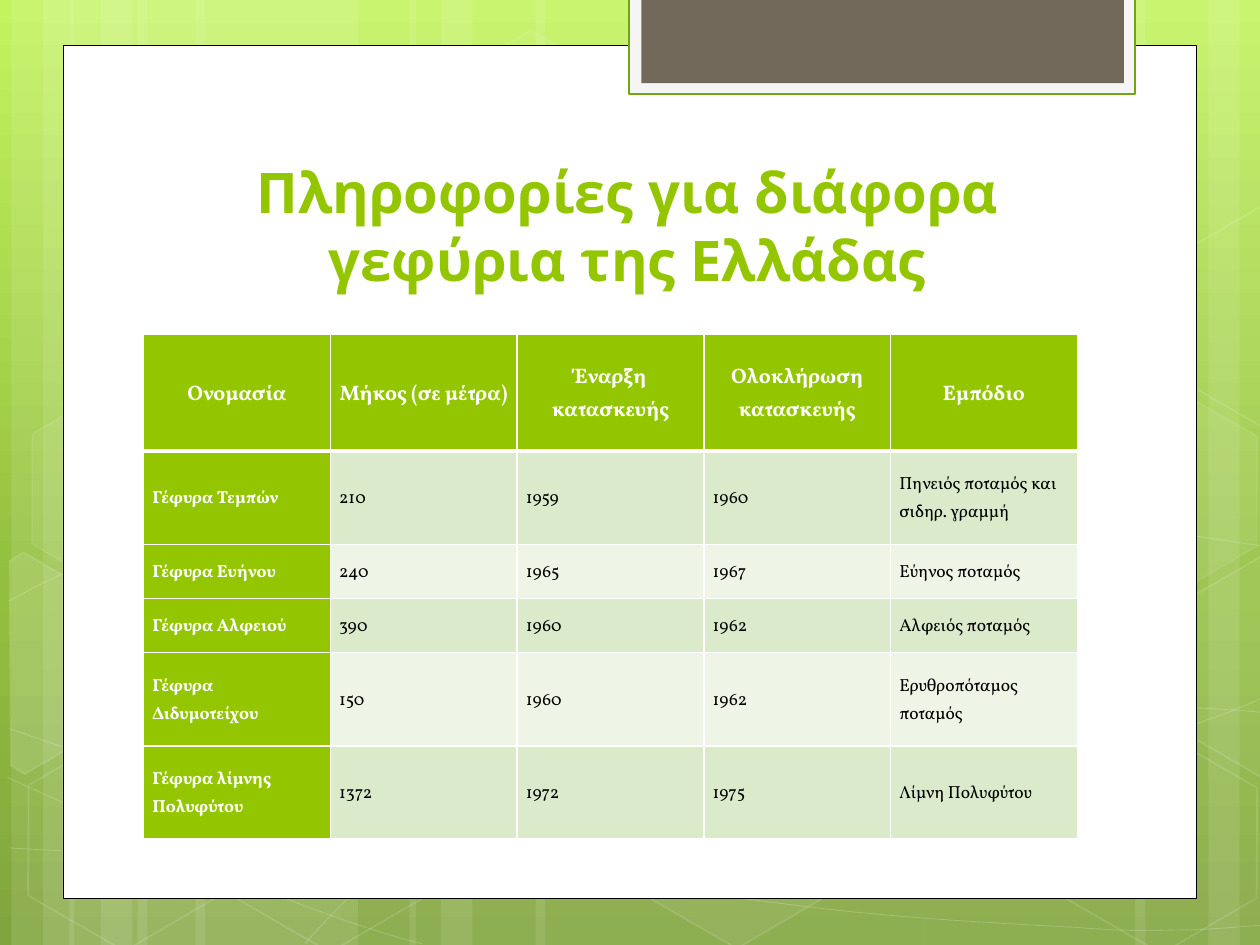
import copy
import dataclasses
import math

import pptx
import pptx.dml.color
import pptx.enum.shapes
import pptx.enum.text
import pptx.oxml
import pptx.oxml.ns
import pptx.util

SHAPE = pptx.enum.shapes.MSO_SHAPE
ALIGN = pptx.enum.text.PP_ALIGN
ANCHOR = pptx.enum.text.MSO_ANCHOR

# The slide is a grid of 10 columns by 7.5 rows; one grid unit is one inch.
UNIT = pptx.util.Inches(1)
TILT = 30
COLORS = {
    "sky": "C3F35F", "leaf": "93BF3F", "moss": "81A53E",
    "green": "94C600", "rim": "74A510", "tab": "71685A", "tab_rim": "F5F5F5",
    "dark_band": "DCEACC", "light_band": "EEF5E7",
    "white": "FFFFFF", "black": "000000",
}
TITLE_FONT, TABLE_FONT = "League Spartan", "Vollkorn"

# Each stripe group: edge, width of its widest stripe, direction.
STRIPE_GROUPS = [(0.09, 1.75, 1), (0.55, 1.75, 1), (10.09, 1.75, -1), (3.25, 3.09, 1)]

# Cubic curves: a start point, then three points for each segment.
CURVES = [
    [(0.07, 6.73), (0.61, 6.76), (1.15, 6.79), (1.9, 6.78), (2.65, 6.77), (3.58, 6.75),
     (4.58, 6.65), (5.58, 6.55), (7, 6.36), (7.92, 6.17), (8.83, 5.98), (9.77, 5.68),
     (10.07, 5.51)],
    [(0.07, 4.77), (0.36, 4.61), (0.65, 4.46), (1.21, 4.31), (1.78, 4.16), (2.59, 3.94),
     (3.47, 3.87), (4.36, 3.8), (5.44, 3.79), (6.54, 3.87), (7.64, 3.95), (9.47, 4.26),
     (10.07, 4.34)],
    [(0.06, 6.17), (1.27, 6.72), (2.47, 7.27), (3.35, 7.49)],
    [(0.07, 5.78), (0.38, 5.89), (0.7, 6), (1.28, 6.16), (1.86, 6.31), (2.73, 6.56),
     (3.57, 6.73), (4.4, 6.9), (5.45, 7.08), (6.28, 7.18), (7.11, 7.29), (8, 7.33),
     (8.53, 7.36), (9.06, 7.4), (9.19, 7.38), (9.45, 7.38), (9.71, 7.37), (9.89, 7.35),
     (10.07, 7.34)],
    [(2.42, 7.49), (2.6, 7.29), (2.78, 7.09), (3.02, 6.91), (3.26, 6.72), (3.6, 6.53),
     (3.88, 6.39), (4.16, 6.25), (4.33, 6.19), (4.69, 6.09), (5.06, 5.99), (5.73, 5.85),
     (6.08, 5.78), (6.44, 5.71), (6.49, 5.71), (6.8, 5.69), (7.11, 5.66), (7.6, 5.63),
     (7.94, 5.62), (8.29, 5.61), (8.86, 5.62), (8.86, 5.62), (8.86, 5.62), (9.53, 5.62),
     (9.53, 5.62), (9.71, 5.63), (9.88, 5.64), (9.97, 5.65), (10.06, 5.66), (10.03, 5.65),
     (10.06, 5.66)],
]

# Hexagons: left, top, fill opacity, line opacity (percent).
HEXAGONS = [
    (3.34, 0.36, 4, 8), (4.97, 5.89, 6, 12), (0.11, 5.91, 0, 12), (0.14, 3.12, 7, 8),
    (1.74, 5.92, 0, 12), (8.34, 5.93, 0, 12), (8.34, 3.14, 7, 8),
]

# Hexagons cut by the slide's edge: centre, corners as they stand, fill opacity.
CUT_HEXAGONS = [
    ((0.36, 5.36), [(0.08, 4.45), (0.19, 4.38), (0.96, 4.83), (0.95, 5.7), (0.2, 6.14),
                    (0.09, 6.07)], 10),
    ((9.85, 5.2), [(9.26, 4.85), (10.02, 4.41), (10.09, 4.46), (10.09, 6.13), (10.02, 6.17),
                   (9.26, 5.73)], 4),
    ((9.85, 2.41), [(9.26, 2.07), (10.02, 1.63), (10.1, 1.68), (10.09, 3.35), (10.02, 3.39),
                    (9.26, 2.95)], 0),
]

BRIDGES = [
    ["Ονομασία", "Μήκος (σε μέτρα)", "Έναρξη κατασκευής", "Ολοκλήρωση κατασκευής", "Εμπόδιο"],
    ["Γέφυρα Τεμπών", "210", "1959", "1960", "Πηνειός ποταμός και σιδηρ. γραμμή"],
    ["Γέφυρα Ευήνου", "240", "1965", "1967", "Εύηνος ποταμός"],
    ["Γέφυρα Αλφειού", "390", "1960", "1962", "Αλφειός ποταμός"],
    ["Γέφυρα Διδυμοτείχου", "150", "1960", "1962", "Ερυθροπόταμος ποταμός"],
    ["Γέφυρα λίμνης Πολυφύτου", "1372", "1972", "1975", "Λίμνη Πολυφύτου"],
]
ROW_HEIGHTS = [0.93, 0.74, 0.43, 0.43, 0.74, 0.74]


@dataclasses.dataclass
class Box:
    left: float
    top: float
    width: float
    height: float

    def inner(self, left, top, width, height):
        return Box(self.left + left, self.top + top, width, height)

    def lengths(self):
        return [round(n * UNIT) for n in (self.left, self.top, self.width, self.height)]


def rgb(name):
    return pptx.dml.color.RGBColor.from_string(COLORS[name])


def paint(fill, color, opacity=100):
    """Fill with a colour; opacity is in percent, and 0 means no fill."""
    if not opacity:
        fill.background()
        return
    fill.solid()
    fill.fore_color.rgb = rgb(color)
    if opacity < 100:
        source = fill._xPr.find(pptx.oxml.ns.qn("a:solidFill"))[0]
        source.append(pptx.oxml.parse_xml(
            f'<a:alpha {pptx.oxml.ns.nsdecls("a")} val="{opacity * 1000}"/>'))


def style(shape, fill, opacity=100, line=None, width=0, line_opacity=100):
    shape.shadow.inherit = False
    paint(shape.fill, fill, opacity)
    if line:
        shape.line.width = pptx.util.Pt(width)
        paint(shape.line.fill, line, line_opacity)
    else:
        shape.line.fill.background()


def add_rectangle(slide, box, fill, **options):
    style(slide.shapes.add_shape(SHAPE.RECTANGLE, *box.lengths()), fill, **options)


def add_outline(slide, box, points, closed):
    scaled = [((box.left + x) * UNIT, (box.top + y) * UNIT) for x, y in points]
    builder = slide.shapes.build_freeform(*scaled[0])
    builder.add_line_segments(scaled[1:], close=closed)
    return builder.convert_to_shape()


def bend(outline):
    """Turn every three straight segments into one cubic curve."""
    qn = pptx.oxml.ns.qn
    route = outline.element.find(".//" + qn("a:path"))
    segments = route.findall(qn("a:lnTo"))
    for first in range(0, len(segments), 3):
        curve = route.makeelement(qn("a:cubicBezTo"))
        segments[first].addprevious(curve)
        for segment in segments[first:first + 3]:
            curve.append(segment[0])
            route.remove(segment)


def turn_back(point, center):
    """Undo the tilt of a point around a centre."""
    across, down = point[0] - center[0], point[1] - center[1]
    cosine, sine = math.cos(math.radians(TILT)), math.sin(math.radians(TILT))
    return center[0] + across * cosine + down * sine, center[1] + down * cosine - across * sine


def set_background(slide):
    fill = slide.background.fill
    fill.gradient()
    fill.gradient_angle = 270
    stop_list = slide.element.find(".//" + pptx.oxml.ns.qn("a:gsLst"))
    stop_list.append(copy.deepcopy(stop_list[0]))
    stops = [(0, "sky"), (0.62, "leaf"), (1, "moss")]
    for stop, (position, color) in zip(fill.gradient_stops, stops):
        stop.position = position
        stop.color.rgb = rgb(color)


def add_backdrop(slide, box):
    for edge, widest, direction in STRIPE_GROUPS:
        for offset, width in [(1, widest), (0, 0.5), (0.25, 0.83)]:
            left = edge + offset if direction > 0 else edge - offset - width
            add_rectangle(slide, box.inner(left, 0, width, box.height), "white", opacity=10)
    for controls in CURVES:
        curve = add_outline(slide, box, controls, closed=False)
        bend(curve)
        style(curve, "white", 0, "white", 0.5, 20)
    for left, top, opacity, line_opacity in HEXAGONS:
        place = box.inner(left, top, 1.75, 1.52)
        hexagon = slide.shapes.add_shape(SHAPE.HEXAGON, *place.lengths())
        hexagon.adjustments[0] = 0.285
        hexagon.rotation = TILT
        style(hexagon, "white", opacity, "white", 1, line_opacity)
    for center, corners, opacity in CUT_HEXAGONS:
        upright = [turn_back(corner, center) for corner in corners]
        hexagon = add_outline(slide, box, upright, closed=True)
        hexagon.rotation = TILT
        style(hexagon, "white", opacity, "white", 1, 12)


def add_card(slide, box):
    add_rectangle(slide, box, "white", line="black", width=0.5)
    add_rectangle(slide, box.inner(4.49, -0.38, 4.02, 0.77), "tab_rim", line="rim", width=1.25)
    add_rectangle(slide, box.inner(4.59, -0.38, 3.83, 0.68), "tab")


def write(paragraph, text, font, size, color, bold):
    run = paragraph.add_run()
    run.text = text
    run.font.name = font
    run.font.size = pptx.util.Pt(size)
    run.font.bold = bold
    run.font.color.rgb = rgb(color)


def place_title(slide, box):
    title = slide.shapes.title
    slide.shapes.element.append(title.element)  # in front of the card
    title.left, title.top, title.width, title.height = box.lengths()
    frame = title.text_frame
    frame.auto_size = pptx.enum.text.MSO_AUTO_SIZE.NONE
    frame.vertical_anchor = ANCHOR.BOTTOM
    frame.paragraphs[0].alignment = ALIGN.CENTER
    write(frame.paragraphs[0], "Πληροφορίες για διάφορα γεφύρια της Ελλάδας",
          TITLE_FONT, 32, "green", True)


def add_borders(cell, top, bottom):
    properties = cell._tc.get_or_add_tcPr()
    for index, (side, width) in enumerate([("L", 1), ("R", 1), ("T", top), ("B", bottom)]):
        properties.insert(index, pptx.oxml.parse_xml(
            f'<a:ln{side} {pptx.oxml.ns.nsdecls("a")} w="{pptx.util.Pt(width)}"><a:solidFill>'
            f'<a:srgbClr val="{COLORS["white"]}"/></a:solidFill></a:ln{side}>'))


def fill_cell(cell, text, row, column):
    header, accent = row == 0, row == 0 or column == 0
    cell.margin_left = cell.margin_right = pptx.util.Inches(0.07)
    cell.margin_top = cell.margin_bottom = pptx.util.Inches(0.03)
    cell.vertical_anchor = ANCHOR.MIDDLE
    paint(cell.fill, "green" if accent else "dark_band" if row % 2 else "light_band")
    add_borders(cell, top=3 if row == 1 else 1, bottom=3 if header else 1)
    paragraph = cell.text_frame.paragraphs[0]
    paragraph.alignment = ALIGN.CENTER if header else ALIGN.LEFT
    paragraph.line_spacing = 1.15
    paragraph.space_before = paragraph.space_after = pptx.util.Pt(12)
    write(paragraph, text, TABLE_FONT, 12 if header else 10,
          "white" if accent else "black", accent)


def add_bridge_table(slide, box):
    table = slide.shapes.add_table(len(BRIDGES), len(BRIDGES[0]), *box.lengths()).table
    for row, (height, texts) in enumerate(zip(ROW_HEIGHTS, BRIDGES)):
        table.rows[row].height = pptx.util.Inches(height)
        for column, text in enumerate(texts):
            fill_cell(table.cell(row, column), text, row, column)


def main():
    presentation = pptx.Presentation()
    presentation.slide_width, presentation.slide_height = 10 * UNIT, round(7.5 * UNIT)
    slide = presentation.slides.add_slide(presentation.slide_layouts.get_by_name("Title Only"))
    set_background(slide)
    add_backdrop(slide, Box(0, 0, 10, 7.5))
    add_card(slide, Box(0.5, 0.36, 9, 6.77))
    place_title(slide, Box(1.14, 1.12, 7.68, 1.25))
    add_bridge_table(slide, Box(1.14, 2.65, 7.41, sum(ROW_HEIGHTS)))
    presentation.save("out.pptx")


if __name__ == "__main__":
    main()
